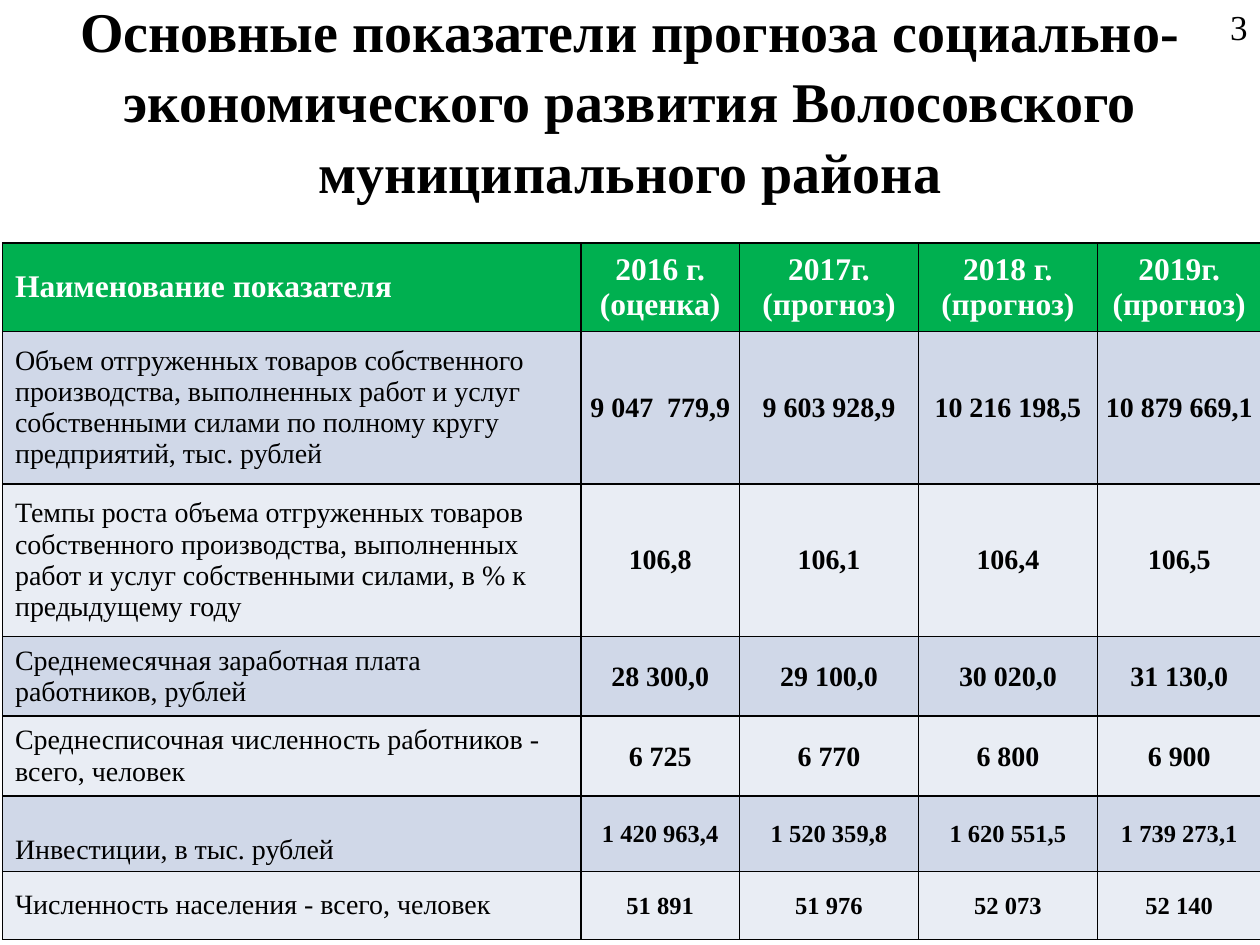
from dataclasses import dataclass

from lxml import etree
from pptx import Presentation
from pptx.dml.color import RGBColor
from pptx.enum import text
from pptx.oxml import ns
from pptx.util import Inches, Pt

FONT = "Times New Roman"
BLACK, WHITE, GREEN = "000000", "FFFFFF", "00B050"
BANDS = ("D0D8E8", "E9EDF4")
COLUMN_WIDTHS = (4.59, 1.26, 1.42, 1.42, 1.3)
HEADINGS = ("Наименование показателя", "2016 г.\n(оценка)", "2017г.\n(прогноз)",
            "2018 г. (прогноз)", "2019г. (прогноз)")


@dataclass
class Indicator:
    name: str
    values: tuple[str, ...]
    height: float = 0.54
    value_size: int = 16
    narrow_margins: bool = True
    name_anchor: text.MSO_ANCHOR = text.MSO_ANCHOR.MIDDLE


INDICATORS = (
    Indicator("Объем отгруженных товаров собственного производства, выполненных работ "
              "и услуг собственными силами по полному кругу предприятий, тыс. рублей",
              ("9 047  779,9", "9 603 928,9", "10 216 198,5", "10 879 669,1"), 1.21),
    Indicator("Темпы роста объема отгруженных товаров собственного производства, выполненных "
              "работ и услуг собственными силами, в % к предыдущему году",
              ("106,8", "106,1", "106,4", "106,5"), 1.21, narrow_margins=False),
    Indicator("Среднемесячная заработная плата работников, рублей",
              ("28 300,0", "29 100,0", "30 020,0", "31 130,0")),
    Indicator("Среднесписочная численность работников - всего, человек",
              ("6 725", "6 770", "6 800", "6 900")),
    Indicator("Инвестиции, в тыс. рублей",
              ("1 420 963,4", "1 520 359,8", "1 620 551,5", "1 739 273,1"),
              0.6, 14, name_anchor=text.MSO_ANCHOR.BOTTOM),
    Indicator("Численность населения - всего, человек",
              ("51 891", "51 976", "52 073", "52 140"), value_size=14),
)


def rgb(color: str) -> RGBColor:
    return RGBColor.from_string(color)


def write(text_frame, content: str, size: int, color: str = BLACK, bold: bool = False,
          align: text.PP_ALIGN = text.PP_ALIGN.CENTER) -> None:
    text_frame.text = content
    for paragraph in text_frame.paragraphs:
        paragraph.alignment = align
        for run in paragraph.runs:
            run.font.name = FONT
            run.font.size = Pt(size)
            run.font.bold = bold
            run.font.color.rgb = rgb(color)


def add_text(slide, box: tuple[float, ...], content: str, size: int, **style):
    text_frame = slide.shapes.add_textbox(*map(Inches, box)).text_frame
    text_frame.word_wrap = True
    text_frame.vertical_anchor = text.MSO_ANCHOR.MIDDLE
    write(text_frame, content, size, **style)
    return text_frame


def add_text_shadow(run) -> None:
    properties = run.font._element
    effects = etree.Element(ns.qn("a:effectLst"))
    shadow = etree.SubElement(effects, ns.qn("a:outerShdw"), blurRad="38100",
                              dist="38100", dir="2700000", algn="tl")
    color = etree.SubElement(shadow, ns.qn("a:srgbClr"), val=BLACK)
    etree.SubElement(color, ns.qn("a:alpha"), val="43000")
    properties.find(ns.qn("a:solidFill")).addnext(effects)


def style_cell(cell, fill: str) -> None:
    """Centre the cell vertically, fill it and give it thin black borders."""
    cell.vertical_anchor = text.MSO_ANCHOR.MIDDLE
    properties = cell._tc.get_or_add_tcPr()
    for side in ("lnL", "lnR", "lnT", "lnB"):
        line = etree.SubElement(properties, ns.qn(f"a:{side}"), w=str(Pt(1)))
        solid = etree.SubElement(line, ns.qn("a:solidFill"))
        etree.SubElement(solid, ns.qn("a:srgbClr"), val=BLACK)
    cell.fill.solid()
    cell.fill.fore_color.rgb = rgb(fill)


def add_indicator_table(slide) -> None:
    heights = [0.59] + [indicator.height for indicator in INDICATORS]
    table = slide.shapes.add_table(
        len(heights), len(COLUMN_WIDTHS), Inches(0.02), Inches(1.93),
        Inches(sum(COLUMN_WIDTHS)), Inches(sum(heights))).table
    for column, width in zip(table.columns, COLUMN_WIDTHS):
        column.width = Inches(width)
    for row, height in zip(table.rows, heights):
        row.height = Inches(height)

    for index, heading in enumerate(HEADINGS):
        cell = table.cell(0, index)
        style_cell(cell, GREEN)
        align = text.PP_ALIGN.CENTER if index else text.PP_ALIGN.LEFT
        write(cell.text_frame, heading, 18, WHITE, True, align)

    for row_index, indicator in enumerate(INDICATORS, start=1):
        fill = BANDS[(row_index - 1) % 2]
        name_cell = table.cell(row_index, 0)
        style_cell(name_cell, fill)
        name_cell.vertical_anchor = indicator.name_anchor
        write(name_cell.text_frame, indicator.name, 16, align=text.PP_ALIGN.LEFT)
        for column_index, value in enumerate(indicator.values, start=1):
            cell = table.cell(row_index, column_index)
            style_cell(cell, fill)
            if indicator.narrow_margins:
                cell.margin_left = cell.margin_right = cell.margin_top = Inches(0.01)
                cell.margin_bottom = 0
            write(cell.text_frame, value, indicator.value_size, bold=True)


def main() -> None:
    presentation = Presentation()
    presentation.slide_width, presentation.slide_height = Inches(10), Inches(7.5)
    slide = presentation.slides.add_slide(presentation.slide_layouts[6])
    title = add_text(slide, (0, 0, 10, 1.57),
                     "Основные показатели прогноза социально- экономического развития "
                     "Волосовского муниципального района", 32, bold=True)
    title.paragraphs[0].line_spacing = 1.05
    add_text_shadow(title.paragraphs[0].runs[0])
    add_indicator_table(slide)
    add_text(slide, (9.57, 0.01, 0.43, 0.4), "3", 20, align=text.PP_ALIGN.RIGHT)
    presentation.save("out.pptx")


if __name__ == "__main__":
    main()
